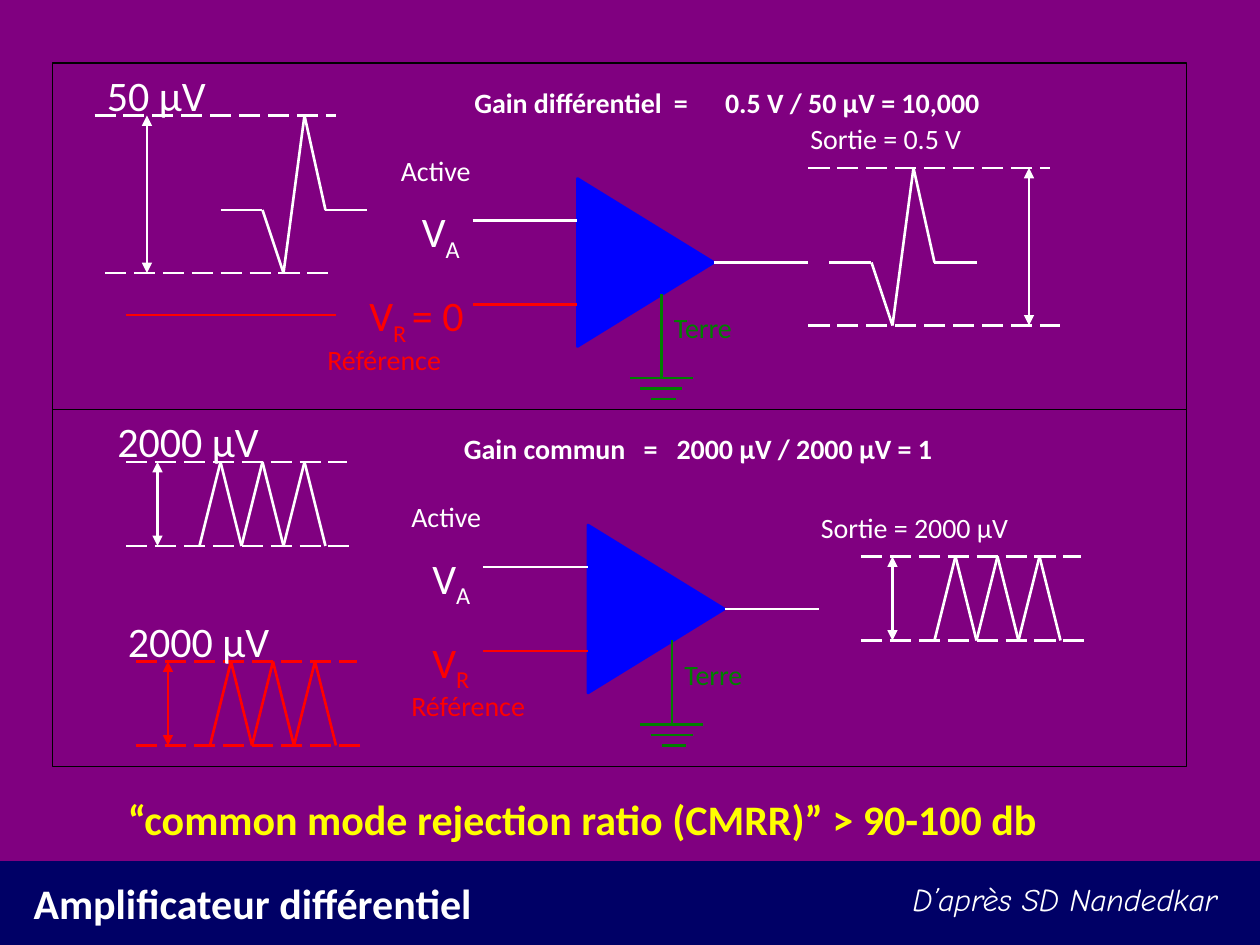
"""Build a slide on the gain of a differential amplifier."""
from dataclasses import dataclass
from itertools import pairwise

from lxml.etree import SubElement
from pptx import Presentation
from pptx.dml.color import RGBColor as Rgb
from pptx.enum.dml import MSO_LINE_DASH_STYLE as Dash
from pptx.enum.shapes import MSO_CONNECTOR as Wire, MSO_SHAPE as Kind
from pptx.enum.text import MSO_ANCHOR as Anchor, MSO_AUTO_SIZE as Fit, PP_ALIGN as Align
from pptx.oxml.ns import qn
from pptx.util import Pt

PX = 9525


@dataclass(frozen=True)
class Theme:
    navy: str = "000066"
    plum: str = "800080"
    blue: str = "0000FF"
    green: str = "008000"
    red: str = "FF0000"
    white: str = "FFFFFF"
    black: str = "000000"
    gold: str = "FFFF00"
    font: str = "Calibri"
    hand: str = "Comic Neue"
    big: int = 24
    mid: int = 18
    small: int = 16
    line: float = 1.5
    thin: float = 0.75


T = Theme()


@dataclass(frozen=True)
class Note:
    """Text whose every second word is a subscript."""
    x: int
    y: int
    w: int
    h: int
    words: tuple[str, ...]
    size: int = T.small
    color: str = T.white
    font: str = T.font
    bold: bool = False
    italic: bool = False
    wrap: bool = True
    space: float = 1.0
    tabs: tuple[int, ...] = ()


@dataclass(frozen=True)
class Amp:
    x: int
    y: int
    ref: tuple[str, ...]
    ref_x: int
    name_x: int


@dataclass(frozen=True)
class Span:
    """Two dashed levels with a double arrow between them."""
    top: tuple[int, int, int]
    low: tuple[int, int, int]
    mark: int
    color: str = T.white


@dataclass(frozen=True)
class Wave:
    x: int
    y: int
    color: str = T.white


def apply(obj, values: dict) -> None:
    for name, value in values.items():
        setattr(obj, name, value)


def place(item, x: int, y: int, w: int, h: int) -> None:
    apply(item, {"left": x * PX, "top": y * PX, "width": w * PX, "height": h * PX})


def fill_note(item, note: Note) -> None:
    frame = item.text_frame
    apply(frame, {"word_wrap": note.wrap, "auto_size": Fit.SHAPE_TO_FIT_TEXT,
                  "vertical_anchor": Anchor.TOP})
    para = frame.paragraphs[0]
    apply(para, {"alignment": Align.LEFT, "line_spacing": note.space})
    if note.tabs:
        stops = SubElement(para._p.get_or_add_pPr(), qn("a:tabLst"))
        for pos in note.tabs:
            SubElement(stops, qn("a:tab"), pos=str(pos * PX), algn="l")
    for num, word in enumerate(note.words):
        run = para.add_run()
        run.text = word
        apply(run.font, {"name": note.font, "size": Pt(note.size),
                         "bold": note.bold, "italic": note.italic})
        run.font.color.rgb = Rgb.from_string(note.color)
        if num % 2:
            run._r.get_or_add_rPr().set("baseline", "-25000")


def add_note(slide, note: Note) -> None:
    item = slide.shapes.add_textbox(0, 0, PX, PX)
    place(item, note.x, note.y, note.w, note.h)
    fill_note(item, note)


def add_line(slide, start: tuple[int, int], end: tuple[int, int], color: str = T.white,
             dash: bool = False, arrow: bool = False) -> None:
    wire = slide.shapes.add_connector(Wire.STRAIGHT, *(n * PX for n in start + end))
    wire.line.color.rgb = Rgb.from_string(color)
    wire.line.width = Pt(T.line)
    if dash:
        wire.line.dash_style = Dash.LONG_DASH
    if arrow:
        for tip in ("a:headEnd", "a:tailEnd"):
            SubElement(wire.line._get_or_add_ln(), qn(tip), type="triangle")
    SubElement(wire._element.spPr, qn("a:effectLst"))


def add_trace(slide, points: list[tuple[int, int]], color: str = T.white) -> None:
    for start, end in pairwise(points):
        add_line(slide, start, end, color)


def add_form(slide, kind: Kind, box: tuple[int, int, int, int], fill: str = "",
             line: str = "", width: float = T.line):
    form = slide.shapes.add_shape(kind, *(n * PX for n in box))
    form.shadow.inherit = False
    for paint, color in ((form.fill, fill), (form.line.fill, line)):
        if color:
            paint.solid()
            paint.fore_color.rgb = Rgb.from_string(color)
        else:
            paint.background()
    if line:
        form.line.width = Pt(width)
    return form


def add_span(slide, span: Span) -> None:
    for left, right, y in (span.top, span.low):
        add_line(slide, (left, y), (right, y), span.color, dash=True)
    add_line(slide, (span.mark, span.top[2]), (span.mark, span.low[2]), span.color, arrow=True)


def add_spike(slide, x: int, y: int) -> None:
    steps = ((0, 0), (32, 0), (48, 48), (64, -72), (80, 0), (112, 0))
    add_trace(slide, [(x + dx, y + dy) for dx, dy in steps])


def add_wave(slide, wave: Wave) -> None:
    x, y, low = wave.x, wave.y, wave.y + 64
    add_span(slide, Span((x, x + 168, y), (x, x + 176, low), x + 24, wave.color))
    add_trace(slide, [(x + 56 + 16 * n, y if n % 2 else low) for n in range(7)], wave.color)


def add_amp(slide, amp: Amp) -> None:
    x, y = amp.x, amp.y
    body = add_form(slide, Kind.ISOSCELES_TRIANGLE, (x, y, 128, 104), T.blue, T.blue)
    body.rotation = 90
    lines = ((76, 76, 76, 140, T.green), (52, 140, 100, 140, T.green),
             (60, 148, 92, 148, T.green), (68, 156, 87, 156, T.green),
             (-68, 20, 12, 20, T.white), (-68, 84, 12, 84, T.red),
             (116, 52, 188, 52, T.white))
    for ax, ay, bx, by, color in lines:
        add_line(slide, (x + ax, y + ay), (x + bx, y + by), color)
    for note in (Note(x - 132, y - 36, 96, 36, ("Active",)),
                 Note(amp.name_x, y + 108, 136, 36, ("Référence",), color=T.red),
                 Note(x + 76, y + 84, 120, 36, ("Terre",), color=T.green),
                 Note(x - 116, y + 4, 64, 48, ("V", "A"), T.big),
                 Note(amp.ref_x, y + 68, 185, 48, amp.ref, T.big, T.red)):
        add_note(slide, note)


AMPS = (Amp(428, 148, ("V", "R ", "= 0"), 272, 240),
        Amp(436, 412, ("V", "R"), 320, 304))
SPANS = (Span((72, 256, 88), (80, 256, 208), 112),
         Span((616, 800, 128), (616, 808, 248), 784))
SPIKES = ((168, 160), (632, 200))
WAVES = (Wave(96, 352), Wave(104, 504, T.red), Wave(656, 424))
TITLE = Note(16, 664, 640, 48, ("Amplificateur différentiel",), T.big, bold=True)
NOTES = (
    Note(72, 48, 155, 48, ("50 µV",), T.big),
    Note(608, 88, 216, 36, ("Sortie = 0.5 V",)),
    Note(352, 64, 576, 33, ("Gain différentiel\t=\t0.5 V / 50 µV = 10,000",),
         bold=True, space=0.85, tabs=(152, 191)),
    Note(80, 312, 192, 48, ("2000 µV",), T.big),
    Note(88, 464, 169, 49, ("2000 µV",), T.big),
    Note(616, 384, 208, 36, ("Sortie = 2000 µV",)),
    Note(344, 328, 552, 33, ("Gain commun\t=\t2000 µV / 2000 µV = 1",),
         bold=True, space=0.85, tabs=(137, 162)),
    Note(88, 600, 846, 48, ("“common mode rejection ratio (CMRR)” > 90-100 db",),
         T.big, T.gold, bold=True),
    Note(686, 666, 270, 38, ("D’après SD Nandedkar",), T.mid, font=T.hand,
         italic=True, wrap=False),
)


def main() -> None:
    deck = Presentation()
    apply(deck, {"slide_width": 960 * PX, "slide_height": 720 * PX})
    slide = deck.slides.add_slide(deck.slide_layouts[5])
    slide.background.fill.solid()
    slide.background.fill.fore_color.rgb = Rgb.from_string(T.navy)
    place(slide.shapes.title, TITLE.x, TITLE.y, TITLE.w, TITLE.h)
    fill_note(slide.shapes.title, TITLE)
    add_form(slide, Kind.RECTANGLE, (0, 0, 960, 656), T.plum)
    for amp in AMPS:
        add_amp(slide, amp)
    for span in SPANS:
        add_span(slide, span)
    for x, y in SPIKES:
        add_spike(slide, x, y)
    for wave in WAVES:
        add_wave(slide, wave)
    add_line(slide, (96, 240), (256, 240), T.red)
    for y, h in ((48, 264), (312, 272)):
        add_form(slide, Kind.RECTANGLE, (40, y, 864, h), line=T.black, width=T.thin)
    for note in NOTES:
        add_note(slide, note)
    deck.save("out.pptx")


if __name__ == "__main__":
    main()
